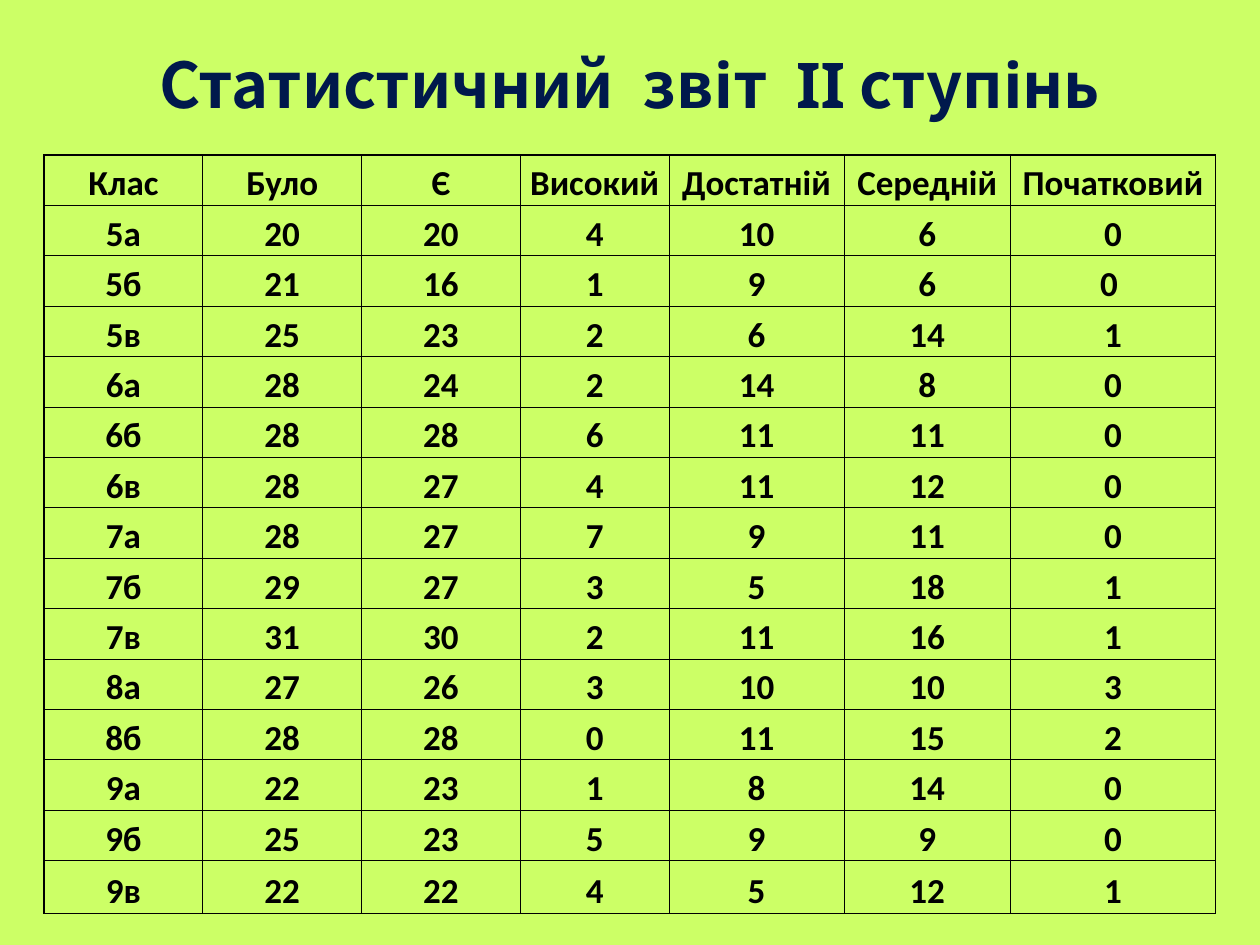
"""Builds the statistical report slide for the second school stage."""
from dataclasses import dataclass

from lxml import etree
from pptx import Presentation
from pptx import util as u
from pptx.dml import color
from pptx.enum import text
from pptx.oxml import ns

TITLE = "Статистичний  звіт  ІІ ступінь"
HEADERS = ["Клас", "Було", "Є", "Високий", "Достатній", "Середній", "Початковий"]
CLASSES = [
    ("5а", 20, 20, 4, 10, 6, 0),
    ("5б", 21, 16, 1, 9, 6, "0 "),
    ("5в", 25, 23, 2, 6, 14, 1),
    ("6а", 28, 24, 2, 14, 8, 0),
    ("6б", 28, 28, 6, 11, 11, 0),
    ("6в", 28, 27, 4, 11, 12, 0),
    ("7а", 28, 27, 7, 9, 11, 0),
    ("7б", 29, 27, 3, 5, 18, 1),
    ("7в", 31, 30, 2, 11, 16, 1),
    ("8а", 27, 26, 3, 10, 10, 3),
    ("8б", 28, 28, 0, 11, 15, 2),
    ("9а", 22, 23, 1, 8, 14, 0),
    ("9б", 25, 23, 5, 9, 9, 0),
    ("9в", 22, 22, 4, 5, 12, 1),
]
COLUMN_WIDTHS = [1.26, 1.26, 1.26, 1.18, 1.39, 1.32, 1.63]
ROW_HEIGHT, LAST_ROW_HEIGHT = 0.4, 0.42
TABLE_LEFT, TABLE_TOP = 0.35, 1.23


@dataclass(frozen=True)
class Theme:
    background: str = "CCFF66"
    title_color: str = "00194C"
    ink: str = "000000"
    title_font: str = "Noto Sans CJK KR"
    table_font: str = "Calibri"
    title_size: int = 36
    table_size: int = 20
    outer_line: float = 1
    inner_line: float = 0.5


THEME = Theme()


def style_paragraph(paragraph, font, size, ink):
    paragraph.alignment = text.PP_ALIGN.CENTER
    paragraph.font.name = font
    paragraph.font.size = u.Pt(size)
    paragraph.font.bold = True
    paragraph.font.color.rgb = color.RGBColor.from_string(ink)


def add_border(cell, side, width):
    properties = cell._tc.get_or_add_tcPr()
    line = etree.SubElement(properties, ns.qn(f"a:ln{side}"), w=str(u.Pt(width)))
    fill = etree.SubElement(line, ns.qn("a:solidFill"))
    etree.SubElement(fill, ns.qn("a:srgbClr"), val=THEME.ink)


def fill_cell(cell, value, outer_sides):
    cell.text = str(value)
    cell.vertical_anchor = text.MSO_ANCHOR.BOTTOM
    cell.margin_left = cell.margin_right = cell.margin_top = u.Inches(0.01)
    cell.margin_bottom = 0
    style_paragraph(cell.text_frame.paragraphs[0],
                    THEME.table_font, THEME.table_size, THEME.ink)
    for side, is_outer in outer_sides.items():
        add_border(cell, side, THEME.outer_line if is_outer else THEME.inner_line)
    cell.fill.background()


def add_title(page):
    title = page.shapes.title
    title.left, title.top = 0, u.Inches(0.25)
    title.width, title.height = u.Inches(10), u.Inches(0.83)
    title.text_frame.text = TITLE
    title.text_frame.vertical_anchor = text.MSO_ANCHOR.MIDDLE
    style_paragraph(title.text_frame.paragraphs[0],
                    THEME.title_font, THEME.title_size, THEME.title_color)


def add_report(page):
    rows = [HEADERS, *CLASSES]
    heights = [ROW_HEIGHT] * len(CLASSES) + [LAST_ROW_HEIGHT]
    last_row, last_column = len(rows) - 1, len(HEADERS) - 1
    table = page.shapes.add_table(
        len(rows), len(HEADERS), u.Inches(TABLE_LEFT), u.Inches(TABLE_TOP),
        u.Inches(sum(COLUMN_WIDTHS)), u.Inches(sum(heights))).table
    table.first_row = table.horz_banding = False
    for column, width in zip(table.columns, COLUMN_WIDTHS):
        column.width = u.Inches(width)
    for row, height in zip(table.rows, heights):
        row.height = u.Inches(height)
    for r, values in enumerate(rows):
        for c, value in enumerate(values):
            fill_cell(table.cell(r, c), value, {
                "L": c == 0, "R": c == last_column, "T": r == 0, "B": r == last_row})


def main():
    deck = Presentation()
    deck.slide_width, deck.slide_height = u.Inches(10), u.Inches(7.5)
    page = deck.slides.add_slide(deck.slide_layouts.get_by_name("Title Only"))
    page.background.fill.solid()
    page.background.fill.fore_color.rgb = color.RGBColor.from_string(THEME.background)
    add_title(page)
    add_report(page)
    deck.save("out.pptx")


if __name__ == "__main__":
    main()
